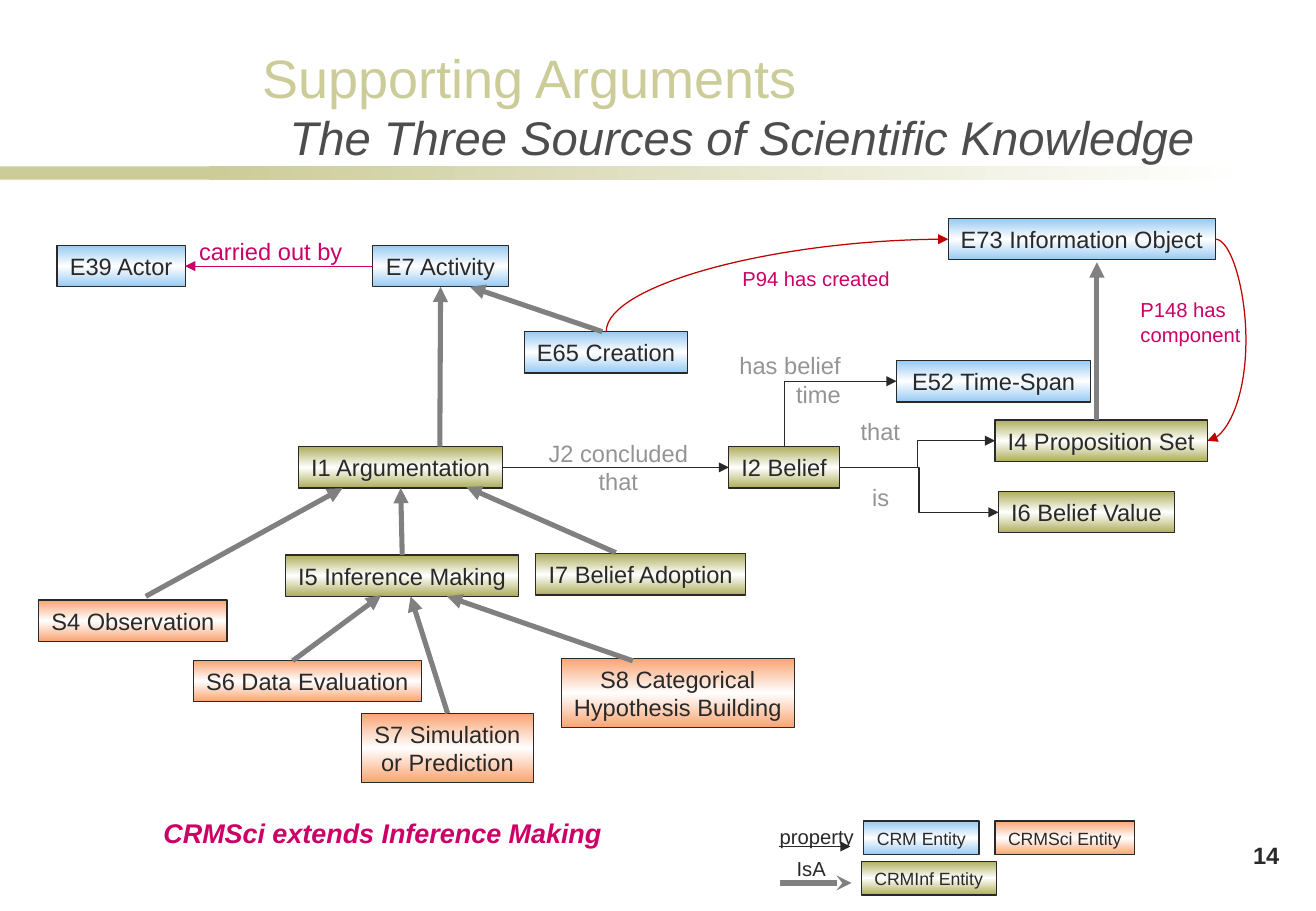
from dataclasses import dataclass

from lxml import etree
from pptx import Presentation
from pptx import util as u
from pptx.dml.color import RGBColor
from pptx.enum import shapes, text
from pptx.oxml import ns

Pt = u.Pt
LEFT, CENTER, RIGHT = text.PP_ALIGN.LEFT, text.PP_ALIGN.CENTER, text.PP_ALIGN.RIGHT
STRAIGHT, ELBOW, CURVE = (shapes.MSO_CONNECTOR.STRAIGHT, shapes.MSO_CONNECTOR.ELBOW,
                          shapes.MSO_CONNECTOR.CURVE)
TOP, LEFT_SIDE, BOTTOM, RIGHT_SIDE = range(4)


@dataclass(frozen=True)
class Theme:
    font: str = "Arial"
    ink: str = "292929"
    title: str = "4D4D4D"
    muted: str = "949494"
    isa: str = "808080"
    accent: str = "CC0066"
    curve: str = "C00000"
    band: str = "CCCC99"
    white: str = "FFFFFF"
    crm: str = "97C9F3"
    inf: str = "AEAE5D"
    sci: str = "FAA372"
    heading_size: float = 32
    title_size: float = 28
    remark_size: float = 16
    body_size: float = 14
    small_size: float = 12
    legend_size: float = 10.5
    thin: float = 0.75
    thick: float = 3


T = Theme()

# Content: lines, colour, left, top, width
ENTITIES = {
    "E39": (["E39 Actor"], T.crm, 33.8, 145.5, 76),
    "E7": (["E7 Activity"], T.crm, 221, 145.5, 80.3),
    "E73": (["E73 Information Object"], T.crm, 562, 129.6, 158.5),
    "E65": (["E65 Creation"], T.crm, 311, 196.6, 96.5),
    "E52": (["E52 Time-Span"], T.crm, 531.4, 213.8, 115.2),
    "I1": (["I1 Argumentation"], T.inf, 177, 264.8, 121),
    "I2": (["I2 Belief"], T.inf, 432, 264.8, 65.5),
    "I4": (["I4 Proposition Set"], T.inf, 589.7, 249, 126),
    "I6": (["I6 Belief Value"], T.inf, 591.8, 291.4, 104.4),
    "I5": (["I5 Inference Making"], T.inf, 169.2, 329, 138.4),
    "I7": (["I7 Belief Adoption"], T.inf, 317.5, 328.3, 124.5),
    "S4": (["S4 Observation"], T.sci, 23, 355.7, 111.6),
    "S6": (["S6 Data Evaluation"], T.sci, 114.5, 391.5, 135.4),
    "S7": (["S7 Simulation", "or Prediction"], T.sci, 214.5, 422.8, 101.6),
    "S8": (["S8 Categorical", "Hypothesis Building"], T.sci, 332.6, 390.2, 138.3),
}
LEGEND = [
    ("CRM Entity", T.crm, 511.9, 486.7, 68.4),
    ("CRMInf Entity", T.inf, 510.5, 510.5, 80),
    ("CRMSci Entity", T.sci, 589.7, 486.7, 82.8),
]
# Lines, colour, size, alignment, left, top, width, height
LABELS = [
    (["carried out by"], T.accent, T.body_size, LEFT, 110.9, 136.8, 102, 24.5),
    (["P94 has created"], T.accent, T.small_size, LEFT, 433, 154.5, 102.5, 21.6),
    (["P148 has", "component"], T.accent, T.small_size, LEFT, 668.9, 172.8, 74.2, 36),
    (["has belief", "time"], T.muted, T.body_size, RIGHT, 430.6, 204.5, 74.9, 41),
    (["J2 concluded", "that"], T.muted, T.body_size, CENTER, 317.5, 256.3, 98, 41),
    (["that"], T.muted, T.body_size, LEFT, 503, 243.4, 38.3, 24.5),
    (["is"], T.muted, T.body_size, LEFT, 509.8, 282.2, 24.5, 24.5),
    (["property"], T.ink, T.small_size, LEFT, 455, 485.3, 63.4, 21.6),
    (["IsA"], T.ink, T.small_size, LEFT, 465.1, 504, 33.1, 21.6),
]
# Subclass arrows: begin, end; either a point or an entity and its side
ISA_LINKS = [
    ((650.2, 249), (650.2, 155.5)),
    ((260.7, 264.8), ("E7", BOTTOM)),
    ((357, 196.6), (278.6, 170)),
    ((86.4, 353.5), (203, 289.4)),
    (("I5", TOP), ("I1", BOTTOM)),
    ((365, 327.6), (276.5, 288.7)),
    ((173.5, 391.7), (226, 352.8)),
    (("S7", TOP), (243.4, 353.5)),
    ((375.1, 391.7), (265, 353.5)),
]

deck = Presentation()
deck.slide_width, deck.slide_height = Pt(780), Pt(540)
page = deck.slides.add_slide(deck.slide_layouts[5])


def rgb(code):
    return RGBColor.from_string(code)


def write(box, lines, color, size, align=CENTER, anchor=text.MSO_ANCHOR.MIDDLE,
          bold=False, italic=False):
    frame = box.text_frame
    frame.word_wrap = False
    frame.auto_size = text.MSO_AUTO_SIZE.NONE
    frame.vertical_anchor = anchor
    for index, line in enumerate(lines):
        para = frame.add_paragraph() if index else frame.paragraphs[0]
        para.alignment = align
        span = para.add_run()
        span.text = line
        font = span.font
        font.name, font.size, font.bold, font.italic = T.font, Pt(size), bold, italic
        font.color.rgb = rgb(color)


def label(lines, color, size, align, left, top, width, height, **style):
    box = page.shapes.add_textbox(Pt(left), Pt(top), Pt(width), Pt(height))
    write(box, lines, color, size, align, **style)


def rectangle(left, top, width, height, colors, angle=0):
    """Fill with one colour, or with evenly spaced gradient colours."""
    box = page.shapes.add_shape(shapes.MSO_SHAPE.RECTANGLE,
                                Pt(left), Pt(top), Pt(width), Pt(height))
    box.shadow.inherit = False
    box.line.fill.background()
    if len(colors) == 1:
        box.fill.solid()
        box.fill.fore_color.rgb = rgb(colors[0])
        return box
    box.fill.gradient()
    gradient = box.element.spPr.find(ns.qn("a:gradFill"))
    for child in list(gradient):
        gradient.remove(child)
    stops = etree.SubElement(gradient, ns.qn("a:gsLst"))
    for index, color in enumerate(colors):
        place = 100000 * index // (len(colors) - 1)
        stop = etree.SubElement(stops, ns.qn("a:gs"), pos=str(place))
        etree.SubElement(stop, ns.qn("a:srgbClr"), val=color)
    etree.SubElement(gradient, ns.qn("a:lin"), ang=str(angle * 60000), scaled="0")
    return box


def entity(lines, color, left, top, width, height, size):
    box = rectangle(left, top, width, height, [color, T.white, color], 90)
    box.line.color.rgb = rgb(T.ink)
    box.line.width = Pt(T.thin)
    write(box, lines, T.ink, size)
    return box


def arrow(begin, end, color=T.ink, width=T.thin, kind=STRAIGHT, head="triangle"):
    joints = [joint if isinstance(joint[0], str) else None for joint in (begin, end)]
    points = [(0, 0) if joint else point for joint, point in zip(joints, (begin, end))]
    link = page.shapes.add_connector(kind, *[Pt(v) for point in points for v in point])
    for joint, connect in zip(joints, (link.begin_connect, link.end_connect)):
        if joint:
            connect(boxes[joint[0]], joint[1])
    link.line.color.rgb = rgb(color)
    link.line.width = Pt(width)
    outline = link.element.spPr.find(ns.qn("a:ln"))
    etree.SubElement(outline, ns.qn("a:tailEnd"), type=head)
    etree.SubElement(link.element.spPr, ns.qn("a:effectLst"))
    return link


def corner_arrow(begin, end, color, kind):
    """Rise from begin, then run right to end: a quarter-turned corner connector."""
    (x1, y1), (x2, y2) = begin, end
    mid_x, mid_y = (x1 + x2) / 2, (y1 + y2) / 2
    half_w, half_h = abs(y2 - y1) / 2, abs(x2 - x1) / 2
    link = arrow((mid_x + half_w, mid_y + half_h), (mid_x - half_w, mid_y - half_h),
                 color, kind=kind)
    link.element.spPr.find(ns.qn("a:xfrm")).set("rot", str(90 * 60000))
    geometry = link.element.spPr.find(ns.qn("a:prstGeom"))
    geometry.set("prst", geometry.get("prst").replace("3", "2"))


# Heading, title and band
rectangle(0, 98.6, 182.2, 7.9, [T.band])
rectangle(123.8, 98.6, 617.8, 7.9, [T.band, T.white])
label(["Supporting Arguments"], T.band, T.heading_size, LEFT, 148.3, 22.3, 334, 46)
title = page.shapes.title
title.left, title.top, title.width, title.height = Pt(152), Pt(56.2), Pt(563), Pt(45.4)
write(title, ["The Three Sources of Scientific Knowledge"], T.title, T.title_size,
      RIGHT, text.MSO_ANCHOR.BOTTOM, italic=True)

# Entities and legend boxes
boxes = {}
for key, (lines, color, left, top, width) in ENTITIES.items():
    height = 24.5 if len(lines) == 1 else 41.2
    boxes[key] = entity(lines, color, left, top, width, height, T.body_size)
for name, color, left, top, width in LEGEND:
    entity([name], color, left, top, width, 20, T.legend_size)

# Subclass arrows
for begin, end in ISA_LINKS:
    arrow(begin, end, T.isa, T.thick)

# Property arrows
arrow(("E7", LEFT_SIDE), ("E39", RIGHT_SIDE), T.accent)
arrow(("I1", RIGHT_SIDE), ("I2", LEFT_SIDE))
for end in [(589.7, 261.3), (591.8, 303.7)]:
    arrow((497.5, 277), end, kind=ELBOW)
corner_arrow((465, 264.8), (531.4, 226), T.ink, ELBOW)
corner_arrow((359.3, 196.6), (562, 141.8), T.curve, CURVE)
component = arrow((720.5, 141.8), (715.7, 261.3), T.curve, kind=CURVE)
bulge = component.element.spPr.find(ns.qn("a:prstGeom")).get_or_add_avLst()
etree.SubElement(bulge, ns.qn("a:gd"), name="adj1", fmla="val -376500")

# Legend arrows
arrow((461.5, 501.8), (504, 501.8))
arrow((462.2, 523.4), (504.7, 523.4), T.isa, T.thick, head="stealth")

# Labels, remark and page number
for item in LABELS:
    label(*item)
label(["CRMSci extends Inference Making"], T.accent, T.remark_size, CENTER,
      87.8, 480.2, 278, 26.6, bold=True, italic=True)
label(["14"], T.ink, T.body_size, RIGHT, 603.4, 488.9, 162, 36, bold=True)

deck.save("out.pptx")
